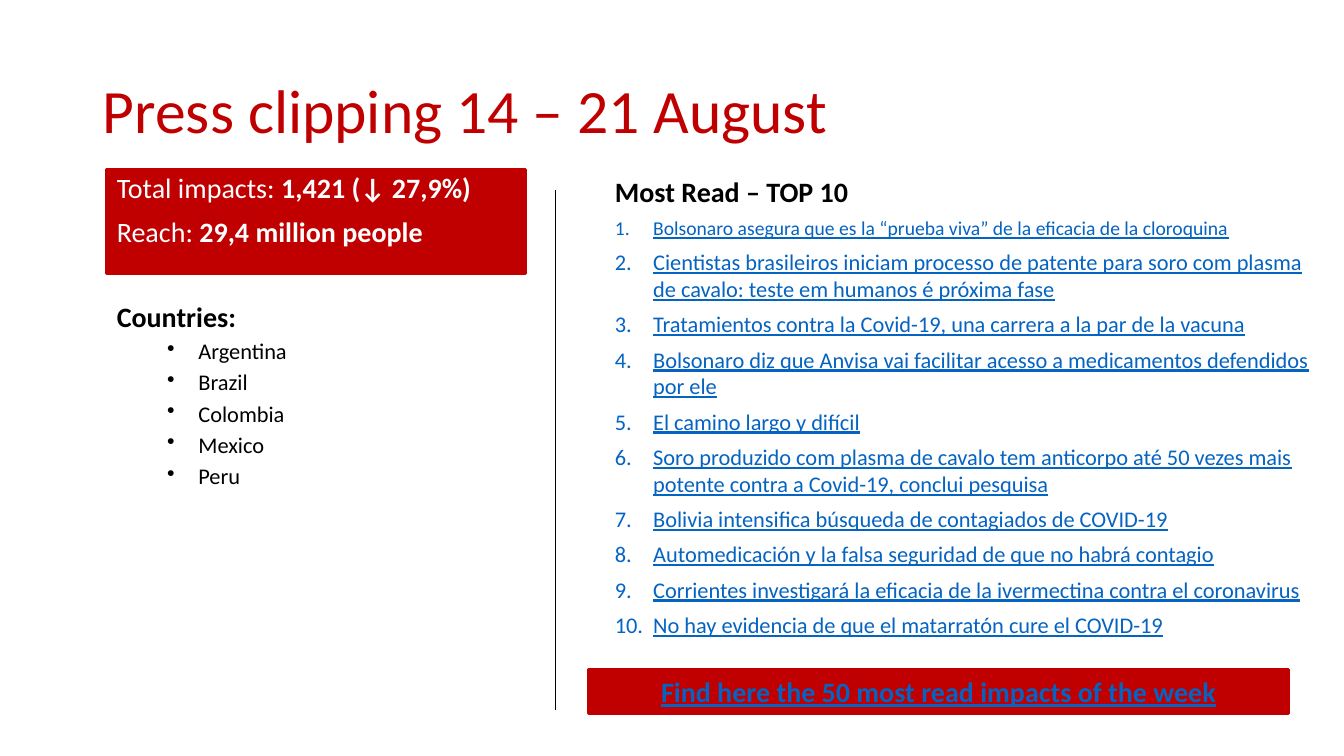
import pptx
import pptx.util
import pptx.dml.color
import pptx.enum.shapes
import pptx.enum.text
import pptx.oxml
import pptx.oxml.ns

Inches = pptx.util.Inches
Pt = pptx.util.Pt
ANCHOR = pptx.enum.text.MSO_ANCHOR

FONT = "Calibri"
RED = pptx.dml.color.RGBColor(0xC0, 0x00, 0x00)
WHITE = pptx.dml.color.RGBColor(0xFF, 0xFF, 0xFF)
BLACK = pptx.dml.color.RGBColor(0x00, 0x00, 0x00)
LINK_BLUE = pptx.dml.color.RGBColor(0x05, 0x63, 0xC1)

COUNTRIES = ["Argentina", "Brazil", "Colombia", "Mexico", "Peru"]
FIGURES = [
    ("Total impacts: ", "1,421 (↓ 27,9%)"),
    ("Reach: ", "29,4 million people"),
]
HEADLINES = [
    "Bolsonaro asegura que es la “prueba viva” de la eficacia de la cloroquina",
    "Cientistas brasileiros iniciam processo de patente para soro com plasma "
    "de cavalo: teste em humanos é próxima fase",
    "Tratamientos contra la Covid-19, una carrera a la par de la vacuna",
    "Bolsonaro diz que Anvisa vai facilitar acesso a medicamentos defendidos por ele",
    "El camino largo y difícil",
    "Soro produzido com plasma de cavalo tem anticorpo até 50 vezes mais "
    "potente contra a Covid-19, conclui pesquisa",
    "Bolivia intensifica búsqueda de contagiados de COVID-19",
    "Automedicación y la falsa seguridad de que no habrá contagio",
    "Corrientes investigará la eficacia de la ivermectina contra el coronavirus",
    "No hay evidencia de que el matarratón cure el COVID-19",
]


def format_span(span, size, color, bold=False, underline=False):
    span.font.name = FONT
    span.font.size = Pt(size)
    span.font.color.rgb = color
    span.font.bold = bold
    span.font.underline = underline


def next_paragraph(frame):
    """Return the first paragraph while it is empty, otherwise a new one."""
    first = frame.paragraphs[0]
    return frame.add_paragraph() if first.runs else first


def add_paragraph(frame, text, size, color, before=0, line=1.0, **style):
    para = next_paragraph(frame)
    para.text = text
    para.space_before = Pt(before)
    para.line_spacing = line
    format_span(para.runs[0], size, color, **style)
    return para


def set_bullet(para, tag, indent, hanging, **attributes):
    """Give the paragraph a hanging indent and a buChar or buAutoNum mark."""
    properties = para._p.get_or_add_pPr()
    properties.set("marL", str(Inches(indent)))
    properties.set("indent", str(-Inches(hanging)))
    mark = pptx.oxml.parse_xml(f"<a:{tag} {pptx.oxml.ns.nsdecls('a')}/>")
    for name, value in attributes.items():
        mark.set(name, value)
    properties.append(mark)


def add_text_box(page, left, top, width, height):
    frame = page.shapes.add_textbox(
        Inches(left), Inches(top), Inches(width), Inches(height)).text_frame
    frame.word_wrap = True
    return frame


def add_red_box(page, left, top, width, height, anchor):
    box = page.shapes.add_shape(
        pptx.enum.shapes.MSO_SHAPE.RECTANGLE,
        Inches(left), Inches(top), Inches(width), Inches(height))
    box.shadow.inherit = False
    box.fill.solid()
    box.fill.fore_color.rgb = RED
    box.line.color.rgb = RED
    box.line.width = Pt(2.25)
    box.text_frame.word_wrap = True
    box.text_frame.vertical_anchor = anchor
    return box.text_frame


def set_title(page, text):
    title = page.shapes.title
    title.left, title.top = Inches(0.92), Inches(0.4)
    title.width, title.height = Inches(11.5), Inches(1.45)
    frame = title.text_frame
    frame.auto_size = pptx.enum.text.MSO_AUTO_SIZE.NONE
    frame.vertical_anchor = ANCHOR.MIDDLE
    para = add_paragraph(frame, text, 44, RED, line=0.9)
    para.alignment = pptx.enum.text.PP_ALIGN.LEFT


def add_figures(page):
    frame = add_red_box(page, 1.06, 1.68, 4.15, 1.03, ANCHOR.TOP)
    for label, value in FIGURES:
        para = add_paragraph(frame, label, 20, WHITE, before=10, line=0.9)
        para.alignment = pptx.enum.text.PP_ALIGN.LEFT
        span = para.add_run()
        span.text = value
        format_span(span, 20, WHITE, bold=True)


def add_countries(page):
    frame = add_text_box(page, 1.06, 2.96, 4.15, 3.34)
    add_paragraph(frame, "Countries:", 20, BLACK, before=10, line=0.9, bold=True)
    for country in COUNTRIES:
        para = add_paragraph(frame, country, 16, BLACK, before=5, line=0.9)
        set_bullet(para, "buChar", 0.81, 0.31, char="•")


def add_most_read(page):
    frame = add_text_box(page, 6, 1.68, 7.14, 4.81)
    add_paragraph(frame, "Most Read – TOP 10", 20, BLACK, before=10, bold=True)
    for index, headline in enumerate(HEADLINES):
        size = 14 if index == 0 else 16
        para = add_paragraph(frame, headline, size, LINK_BLUE, before=6, underline=True)
        set_bullet(para, "buAutoNum", 0.38, 0.38, type="arabicPeriod")


def add_week_banner(page):
    frame = add_red_box(page, 5.84, 6.64, 6.94, 0.44, ANCHOR.MIDDLE)
    para = add_paragraph(frame, "Find here the 50 most read impacts of the week",
                         20, LINK_BLUE, bold=True, underline=True)
    para.alignment = pptx.enum.text.PP_ALIGN.CENTER


def add_divider(page):
    divider = page.shapes.add_connector(
        pptx.enum.shapes.MSO_CONNECTOR.STRAIGHT,
        Inches(5.51), Inches(1.89), Inches(5.51), Inches(7.04))
    divider.line.color.rgb = BLACK
    divider.line.width = Pt(0.5)
    divider._element.spPr.append(
        pptx.oxml.parse_xml(f"<a:effectLst {pptx.oxml.ns.nsdecls('a')}/>"))


def main():
    deck = pptx.Presentation()
    deck.slide_width, deck.slide_height = Inches(13.33), Inches(7.5)
    page = deck.slides.add_slide(deck.slide_layouts.get_by_name("Title Only"))
    set_title(page, "Press clipping 14 – 21 August")
    add_countries(page)
    add_figures(page)
    add_most_read(page)
    add_week_banner(page)
    add_divider(page)
    deck.save("out.pptx")


if __name__ == "__main__":
    main()
